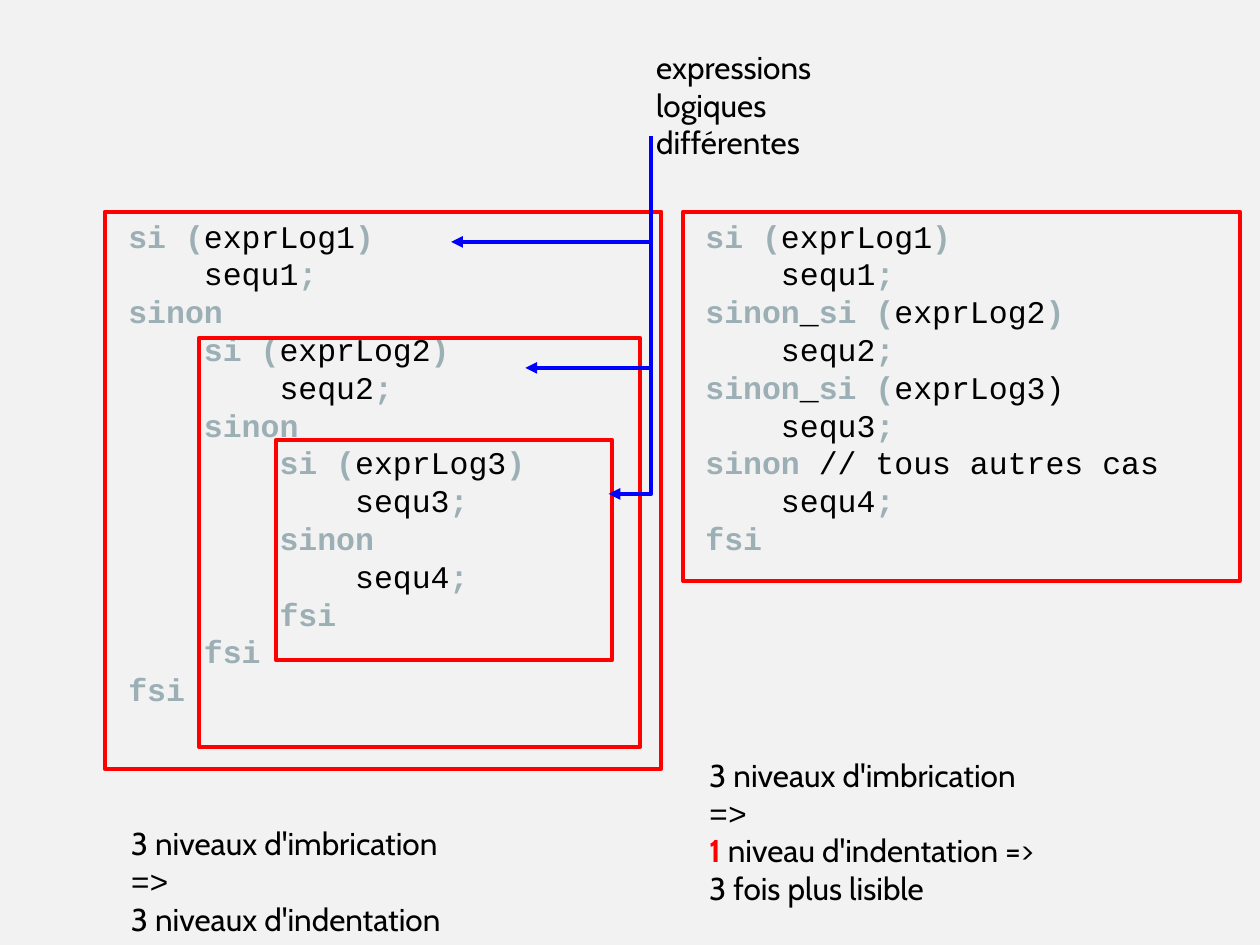
"""Build a slide comparing nested and chained conditionals in pseudocode."""
from dataclasses import dataclass

from lxml.etree import SubElement
from pptx import Presentation
from pptx.dml.color import RGBColor
from pptx.enum.shapes import MSO_CONNECTOR, MSO_SHAPE
from pptx.oxml.ns import qn
from pptx.util import Inches, Pt

COLORS = {"background": "F2F2F2", "keyword": "9BAFB5", "text": "000000",
          "accent": "FF0000", "arrow": "0000FF"}
CODE_FONT, NOTE_FONT = "Courier New", "Cabin"
ARROW_X = 5.17


@dataclass
class Run:
    text: str
    font: str = NOTE_FONT
    color: str = "text"
    bold: bool = False


@dataclass
class Box:
    left: float
    top: float
    width: float
    height: float

    def lengths(self) -> list:
        return [Inches(v) for v in (self.left, self.top, self.width, self.height)]


@dataclass
class TextBlock:
    box: Box
    lines: list[list[Run]]
    wrap: bool = True


def code_lines(source: str) -> list[list[Run]]:
    """Split each line at bars: plain code and keywords alternate."""
    return [[Run(part, CODE_FONT, "keyword" if i % 2 else "text", i % 2 == 1)
             for i, part in enumerate(line.split("|")) if part]
            for line in source.strip("\n").split("\n")]


NESTED = """
|si (|exprLog1|)
    sequ1|;
|sinon
    |si (|exprLog2|)
        sequ2|;
    |sinon
        |si (|exprLog3|)
            sequ3|;
        |sinon
            sequ4|;
        |fsi
    |fsi
|fsi
"""
CHAINED = """
|si (|exprLog1|)
    sequ1|;
|sinon|_|si (|exprLog2|)
    sequ2|;
|sinon|_|si (|exprLog3)
    sequ3|;
|sinon| // tous autres cas
    sequ4|;
|fsi
"""
NESTING = [Run("3 niveaux d'imbrication"), Run(" =>", CODE_FONT)]
TEXTS = [
    TextBlock(Box(0.92, 1.67, 3.65, 4), code_lines(NESTED), False),
    TextBlock(Box(5.5, 1.67, 3.8, 2.8), code_lines(CHAINED), False),
    TextBlock(Box(0.94, 6.49, 3.07, 0.7),
              [NESTING, [Run("3 niveaux d'indentation")]]),
    TextBlock(Box(5.53, 5.95, 3.07, 1),
              [NESTING,
               [Run("1", color="accent", bold=True), Run(" niveau d'indentation =>")],
               [Run("3 fois plus lisible")]]),
    TextBlock(Box(5.11, 0.33, 2.29, 0.7),
              [[Run("expressions logiques")], [Run("différentes")]]),
]
FRAMES = [Box(0.83, 1.68, 4.42, 4.42), Box(1.58, 2.68, 3.5, 3.25),
          Box(2.19, 3.49, 2.67, 1.75), Box(5.42, 1.68, 4.42, 2.93)]


def rgb(name: str) -> RGBColor:
    return RGBColor.from_string(COLORS[name])


def set_line(shape, color: str) -> None:
    shape.line.color.rgb = rgb(color)
    shape.line.width = Pt(2.25)


def add_text(shapes, block: TextBlock) -> None:
    frame = shapes.add_textbox(*block.box.lengths()).text_frame
    frame.word_wrap = block.wrap
    for index, line in enumerate(block.lines):
        paragraph = frame.add_paragraph() if index else frame.paragraphs[0]
        paragraph.line_spacing = Pt(21.6)
        paragraph.font.size = Pt(18)
        for piece in line:
            run = paragraph.add_run()
            run.text = piece.text
            run.font.name = piece.font
            run.font.bold = piece.bold
            run.font.color.rgb = rgb(piece.color)


def add_frame(shapes, box: Box) -> None:
    frame = shapes.add_shape(MSO_SHAPE.RECTANGLE, *box.lengths())
    frame.shadow.inherit = False
    frame.fill.background()
    set_line(frame, "accent")


def style_arrow(arrow) -> None:
    set_line(arrow, "arrow")
    SubElement(arrow.line._get_or_add_ln(), qn("a:tailEnd"), type="triangle")


def add_arrow(shapes, tip_x: float, y: float) -> None:
    arrow = shapes.add_connector(MSO_CONNECTOR.STRAIGHT, Inches(ARROW_X), Inches(y),
                                 Inches(tip_x), Inches(y))
    style_arrow(arrow)
    SubElement(arrow._element.spPr, qn("a:effectLst"))


def add_elbow(shapes, top: float, tip_x: float, tip_y: float) -> None:
    builder = shapes.build_freeform(Inches(ARROW_X), Inches(top))
    builder.add_line_segments([(Inches(ARROW_X), Inches(tip_y)),
                               (Inches(tip_x), Inches(tip_y))], close=False)
    elbow = builder.convert_to_shape()
    elbow.shadow.inherit = False
    elbow.fill.background()
    style_arrow(elbow)


def main() -> None:
    presentation = Presentation()
    presentation.slide_width, presentation.slide_height = Inches(10), Inches(7.5)
    slide = presentation.slides.add_slide(presentation.slide_layouts[6])
    slide.background.fill.solid()
    slide.background.fill.fore_color.rgb = rgb("background")
    for block in TEXTS:
        add_text(slide.shapes, block)
    for box in FRAMES:
        add_frame(slide.shapes, box)
    add_elbow(slide.shapes, 1.08, 4.83, 3.92)
    for tip_x, y in ((3.58, 1.92), (4.17, 2.92)):
        add_arrow(slide.shapes, tip_x, y)
    presentation.save("out.pptx")


if __name__ == "__main__":
    main()
